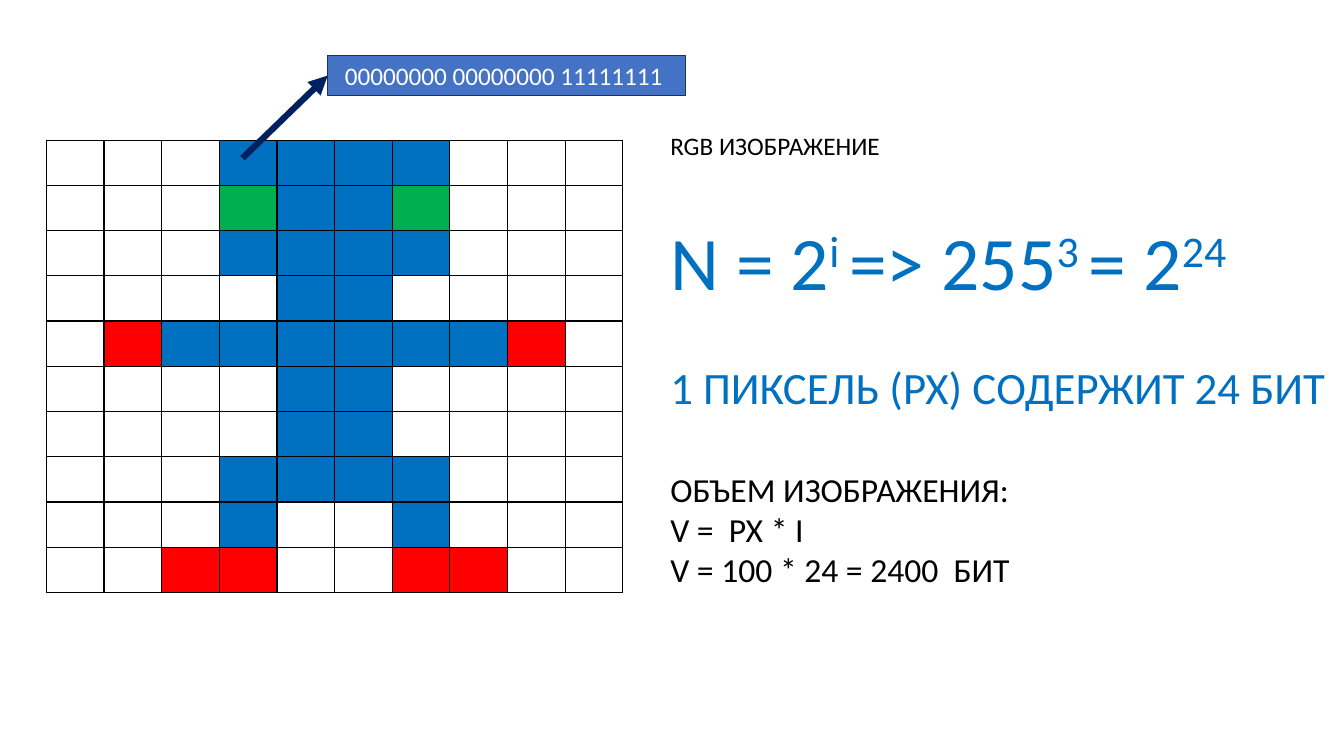
from lxml.etree import SubElement
from pptx import Presentation
from pptx.dml.color import RGBColor
from pptx.enum.shapes import MSO_CONNECTOR as CONN, MSO_SHAPE as SHAPE
from pptx.enum.text import MSO_ANCHOR as ANCHOR, PP_ALIGN as ALIGN
from pptx.oxml import parse_xml
from pptx.oxml.ns import nsdecls, qn
from pptx.util import Inches, Pt

COLORS = {
    "blue": "0070C0", "green": "00B050", "red": "FF0000", "white": "FFFFFF",
    "black": "000000", "callout": "4472C4", "edge": "1E3256", "arrow": "002060",
}
FONT = "Calibri"
PIXELS = [
    "...BBBB...",
    "...GBBG...",
    "...BBBB...",
    "....BB....",
    ".RBBBBBBR.",
    "....BB....",
    "....BB....",
    "...BBBB...",
    "...B..B...",
    "..RR..RR..",
]
PIXEL_COLORS = {".": "white", "B": "blue", "G": "green", "R": "red"}
GRID_BOX = (0.46, 1.39, 5.72, 4.49)
CALLOUT_BOX = (3.25, 0.55, 3.55, 0.4)
NOTES_BOX = (6.55, 1.24, 6.78, 4.68)
GAP = 39  # points between blocks of notes


def rgb(name):
    return RGBColor.from_string(COLORS[name])


def add_text(p, text, size=18, color="black", raised=False):
    r = p.add_run()
    r.text = text
    r.font.name, r.font.size = FONT, Pt(size)
    r.font.color.rgb = rgb(color)
    if raised:
        r.font._element.set("baseline", "30000")


def add_borders(cell):
    tc_pr = cell._tc.get_or_add_tcPr()
    for i, side in enumerate(("lnL", "lnR", "lnT", "lnB")):
        tc_pr.insert(i, parse_xml(
            f'<a:{side} w="12700" {nsdecls("a")}><a:solidFill>'
            f'<a:srgbClr val="{COLORS["black"]}"/></a:solidFill></a:{side}>'))


# Pixel figure
def add_pixel_grid(s, box):
    rows, cols = len(PIXELS), len(PIXELS[0])
    table = s.shapes.add_table(rows, cols, *map(Inches, box)).table
    for col in table.columns:
        col.width = Inches(box[2] / cols)
    for row, codes in zip(table.rows, PIXELS):
        row.height = Inches(box[3] / rows)
        for cell, code in zip(row.cells, codes):
            cell.fill.solid()
            cell.fill.fore_color.rgb = rgb(PIXEL_COLORS[code])
            add_borders(cell)


# Binary code of one pixel
def add_callout(s, box):
    sp = s.shapes.add_shape(SHAPE.RECTANGLE, *map(Inches, box))
    sp.shadow.inherit = False
    sp.fill.solid()
    sp.fill.fore_color.rgb = rgb("callout")
    sp.line.color.rgb = rgb("edge")
    sp.line.width = Pt(1)
    tf = sp.text_frame
    tf.word_wrap = False
    tf.vertical_anchor = ANCHOR.MIDDLE
    tf.margin_left = Inches(0.17)
    p = tf.paragraphs[0]
    p.alignment = ALIGN.LEFT
    add_text(p, "00000000 00000000 11111111", color="white")


# Arrow from the first blue pixel to the callout
def add_arrow(s, grid, callout):
    col = PIXELS[0].index("B")
    start = (grid[0] + (col + 0.4) * grid[2] / len(PIXELS[0]),
             grid[1] + 0.4 * grid[3] / len(PIXELS))
    end = (callout[0], callout[1] + callout[3] / 2)
    line = s.shapes.add_connector(CONN.STRAIGHT, *map(Inches, start + end))
    line.line.color.rgb = rgb("arrow")
    line.line.width = Pt(4.5)
    SubElement(line.line._get_or_add_ln(), qn("a:tailEnd"), type="triangle")
    SubElement(line._element.spPr, qn("a:effectLst"))


# Formulas and explanation
def add_notes(s, box):
    tf = s.shapes.add_textbox(*map(Inches, box)).text_frame
    tf.word_wrap = True
    add_text(tf.paragraphs[0], "RGB ИЗОБРАЖЕНИЕ")

    p = tf.add_paragraph()
    p.space_before = Pt(GAP)
    formula = ["N = 2", "i ", "=> 255", "3 ", "= 2", "24"]
    for i, part in enumerate(formula):
        add_text(p, part, size=54, color="blue", raised=i % 2 == 1)

    for text, size, color, gap in [
        ("1 ПИКСЕЛЬ (PX) СОДЕРЖИТ 24 БИТ", 32, "blue", GAP),
        ("ОБЪЕМ ИЗОБРАЖЕНИЯ:", 24, "black", GAP),
        ("V =  PX * I", 24, "black", 0),
        ("V = 100 * 24 = 2400  БИТ", 24, "black", 0),
    ]:
        p = tf.add_paragraph()
        p.space_before = Pt(gap)
        add_text(p, text, size=size, color=color)


def main():
    prs = Presentation()
    prs.slide_width, prs.slide_height = Inches(13.33), Inches(7.5)
    s = prs.slides.add_slide(prs.slide_layouts[6])
    add_callout(s, CALLOUT_BOX)
    add_notes(s, NOTES_BOX)
    add_pixel_grid(s, GRID_BOX)
    add_arrow(s, GRID_BOX, CALLOUT_BOX)
    prs.save("out.pptx")


if __name__ == "__main__":
    main()
